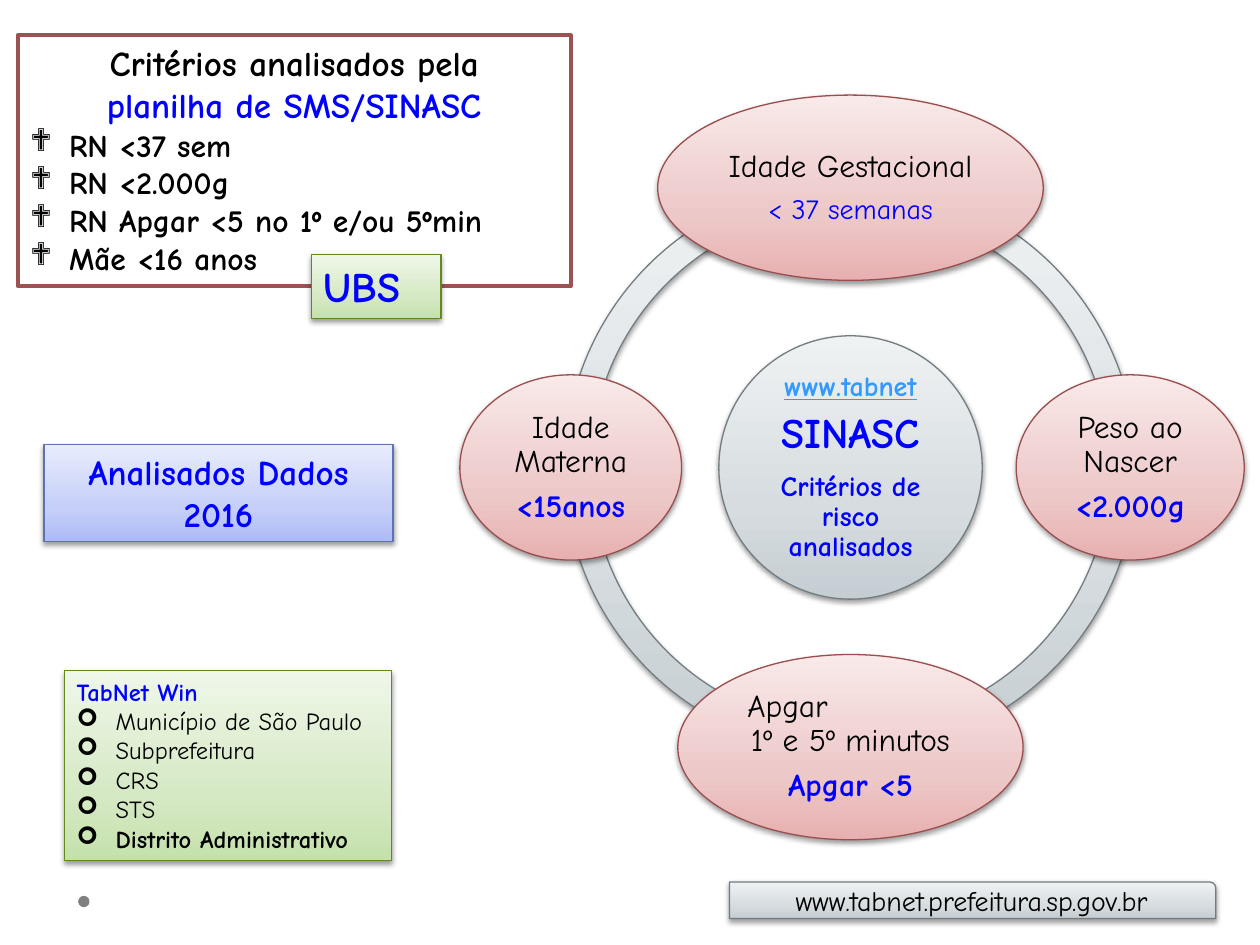
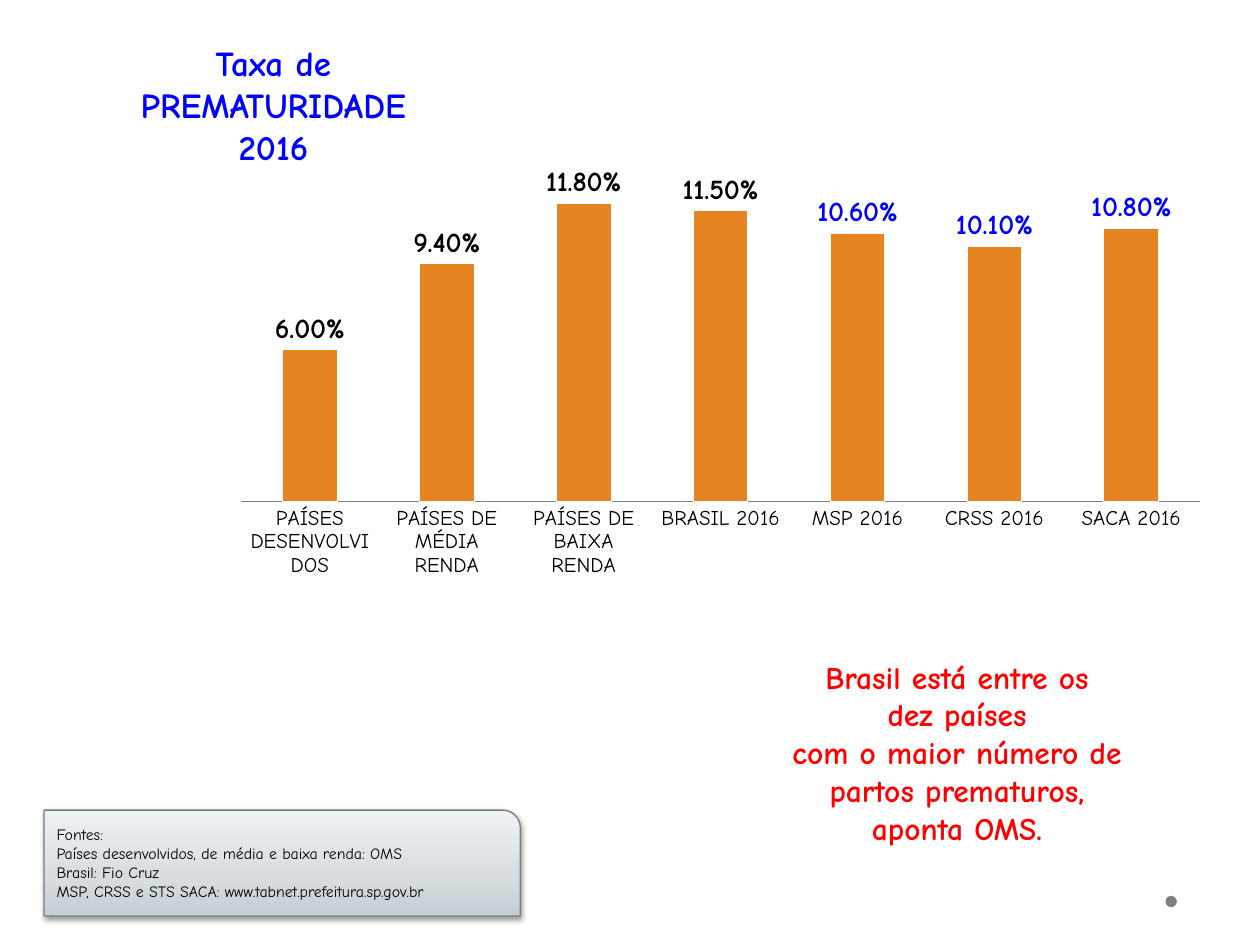
from lxml import etree
from pptx import Presentation
from pptx.chart.data import CategoryChartData
from pptx.dml.color import RGBColor
from pptx.enum.chart import XL_CHART_TYPE, XL_LABEL_POSITION, XL_TICK_MARK
from pptx.enum.shapes import MSO_SHAPE
from pptx.enum.text import MSO_ANCHOR, PP_ALIGN
from pptx.oxml.ns import qn
from pptx.util import Inches, Pt

RECTANGLE = MSO_SHAPE.RECTANGLE
ELLIPSE = MSO_SHAPE.OVAL
ARC = MSO_SHAPE.BLOCK_ARC
SOURCE_BAND = MSO_SHAPE.ROUND_1_RECTANGLE
LEFT, CENTER = PP_ALIGN.LEFT, PP_ALIGN.CENTER
TOP, MIDDLE = MSO_ANCHOR.TOP, MSO_ANCHOR.MIDDLE
COLUMNS = XL_CHART_TYPE.COLUMN_CLUSTERED
OUTSIDE_END = XL_LABEL_POSITION.OUTSIDE_END
NO_TICK = XL_TICK_MARK.NONE

FONT = "Comic Neue"
BLACK, WHITE, GRAY = "000000", "FFFFFF", "808080"
BLUE, LIGHT_BLUE, RED = "0000FF", "3399FF", "FF0000"
ORANGE, BROWN = "E68422", "9C5252"
PERCENT = "0.00%"

# Each theme: gradient stops from bottom to top, then the outline
SILVER = ("C5CED2", "D6DCDF", "EFF2F3", "727D82")
ROSE = ("E8B0B0", "EDC8C8", "F9E9E9", "9A4E4E")
PERIWINKLE = ("ADBBF6", "C5CFF8", "E8ECFD", "5C72B2")
GREEN = ("C5E1AB", "D6E9C5", "EFF7E9", "62891C")


def rgb(hex_color):
    return RGBColor.from_string(hex_color)


def add_element(parent, tag, **attributes):
    return etree.SubElement(parent, qn(tag), {key: str(value) for key, value in attributes.items()})


def add_plain_shape(slide, kind, box, fill, line=None, width=0.75):
    shape = slide.shapes.add_shape(kind, *map(Inches, box))
    shape.shadow.inherit = False
    shape.fill.solid()
    shape.fill.fore_color.rgb = rgb(fill)
    if line:
        shape.line.color.rgb = rgb(line)
        shape.line.width = Pt(width)
    else:
        shape.line.fill.background()
    return shape


def add_glossy_shape(slide, kind, box, theme):
    """Shape with a vertical three-stop gradient and a soft shadow."""
    *stops, line = theme
    shape = add_plain_shape(slide, kind, box, stops[0], line)
    shape.fill.gradient()
    properties = shape._element.spPr
    gradient = properties.find(qn("a:gradFill"))
    for child in list(gradient):
        gradient.remove(child)
    stop_list = add_element(gradient, "a:gsLst")
    for position, color in zip((0, 35000, 100000), stops):
        stop = add_element(stop_list, "a:gs", pos=position)
        add_element(stop, "a:srgbClr", val=color)
    add_element(gradient, "a:lin", ang=270 * 60000, scaled=0)

    effects = properties.find(qn("a:effectLst"))
    shadow = add_element(effects, "a:outerShdw", blurRad=Pt(3.1), dist=Pt(1.6),
                         dir=90 * 60000, rotWithShape=0)
    shadow_color = add_element(shadow, "a:srgbClr", val=BLACK)
    add_element(shadow_color, "a:alpha", val=38000)
    return shape


def line_of(text, size, color=BLACK, bold=False, **options):
    """One paragraph; options: align, bullet, indent, underline, after."""
    return {"text": text, "size": size, "color": color, "bold": bold, **options}


def write(shape, lines, anchor=TOP, align=LEFT, inset=None, spacing=None):
    frame = shape.text_frame
    frame.word_wrap = True
    frame.vertical_anchor = anchor
    if inset is not None:
        frame.margin_left = frame.margin_right = Inches(inset)
        frame.margin_top = frame.margin_bottom = Inches(inset)
    for index, line in enumerate(lines):
        paragraph = frame.add_paragraph() if index else frame.paragraphs[0]
        paragraph.text = line["text"]
        paragraph.alignment = line.get("align", align)
        if spacing:
            paragraph.line_spacing = spacing
        if "after" in line:
            paragraph.space_after = Pt(line["after"])
        properties = paragraph._p.get_or_add_pPr()
        if "indent" in line:
            properties.set("marL", str(Inches(line["indent"])))
        if "bullet" in line:
            properties.set("marL", str(Inches(0.31)))
            properties.set("indent", str(Inches(-0.31)))
            add_element(properties, "a:buFont", typeface="Wingdings")
            add_element(properties, "a:buChar", char=line["bullet"])
        for run in paragraph.runs:
            font = run.font
            font.name, font.size, font.bold = FONT, Pt(line["size"]), line["bold"]
            font.color.rgb = rgb(line["color"])
            if line.get("underline"):
                font.underline = True


def add_text(slide, box, lines, align):
    write(slide.shapes.add_textbox(*map(Inches, box)), lines, align=align)


def add_dot(slide, left):
    add_plain_shape(slide, ELLIPSE, (left, 7.11, 0.09, 0.09), GRAY)


def add_cycle_node(slide, center, size, theme, lines, inset=0.03):
    left, top = (middle - length / 2 for middle, length in zip(center, size))
    node = add_glossy_shape(slide, ELLIPSE, (left, top, *size), theme)
    spaced = [{"after": line["size"] * 0.35, **line} for line in lines]
    write(node, spaced, MIDDLE, CENTER, inset, spacing=0.9)


def add_criteria_cycle(slide):
    center_x, center_y, diameter, radius = 6.75, 3.71, 4.54, 2.22
    ring_box = (center_x - diameter / 2, center_y - diameter / 2, diameter, diameter)

    # Ring of four quarter arcs (54 adjustment units are 90 degrees)
    for quarter in (2, 1, 0, 3):
        arc = add_glossy_shape(slide, ARC, ring_box, SILVER)
        arc.adjustments[0] = quarter * 54
        arc.adjustments[1] = (quarter + 1) % 4 * 54
        arc.adjustments[2] = 0.046

    add_cycle_node(slide, (center_x, center_y), (2.09, 2.09), SILVER, [
        line_of("www.tabnet", 16, LIGHT_BLUE, True, underline=True),
        line_of("SINASC", 24, BLUE, True),
        line_of("Critérios de risco analisados", 16, BLUE, True),
    ], inset=0.02)

    # Criteria clockwise from the top: direction, width, text
    criteria = [
        (0, -1, 3.06, [line_of("Idade Gestacional", 18),
                       line_of("< 37 semanas", 16, BLUE)]),
        (1, 0, 1.81, [line_of("Peso ao Nascer", 18),
                      line_of("<2.000g", 18, BLUE, True)]),
        (0, 1, 2.74, [line_of("Apgar", 18, align=LEFT, indent=0.12, after=0),
                      line_of("1º e 5º minutos", 18),
                      line_of("Apgar <5", 18, BLUE, True)]),
        (-1, 0, 1.76, [line_of("Idade Materna", 18),
                       line_of("<15anos", 18, BLUE, True)]),
    ]
    for across, down, width, lines in criteria:
        center = (center_x + across * radius, center_y + down * radius)
        add_cycle_node(slide, center, (width, 1.47), ROSE, lines)


def add_rate_chart(slide, rates):
    data = CategoryChartData(number_format=PERCENT)
    data.categories = list(rates)
    data.add_series("Series 1", rates.values())
    frame = slide.shapes.add_chart(COLUMNS, *map(Inches, (0.59, -0.19, 9.21, 7.56)), data)
    chart = frame.chart
    chart.has_legend = chart.has_title = False
    chart.font.name, chart.font.size = FONT, Pt(12)
    chart.font.color.rgb = rgb(BLACK)

    # Axes
    category_axis, value_axis = chart.category_axis, chart.value_axis
    category_axis.major_tick_mark = category_axis.minor_tick_mark = NO_TICK
    category_axis.format.line.color.rgb = rgb(GRAY)
    value_axis.minimum_scale, value_axis.maximum_scale = 0, 0.14
    value_axis.has_major_gridlines = False
    value_axis.tick_labels.number_format = PERCENT
    value_axis.tick_labels.number_format_is_linked = False
    value_axis.visible = False

    # Columns and their labels
    plot = chart.plots[0]
    plot.gap_width = 150
    plot.vary_by_categories = False
    series = plot.series[0]
    series.format.fill.solid()
    series.format.fill.fore_color.rgb = rgb(ORANGE)
    series.format.line.color.rgb = rgb(WHITE)
    labels = series.data_labels
    labels.show_value = True
    labels.number_format = PERCENT
    labels.number_format_is_linked = False
    labels.position = OUTSIDE_END
    local_labels = [series.points[index].data_label for index in (4, 5, 6)]
    for label, color in [(labels, BLACK)] + [(label, BLUE) for label in local_labels]:
        label.font.name, label.font.size, label.font.bold = FONT, Pt(16), True
        label.font.color.rgb = rgb(color)
        label.position = OUTSIDE_END

    # Fixed inner plot area
    plot_area = chart._chartSpace.chart.plotArea
    for old_layout in plot_area.findall(qn("c:layout")):
        plot_area.remove(old_layout)
    layout = etree.Element(qn("c:layout"))
    plot_area.insert(0, layout)
    manual = add_element(layout, "c:manualLayout")
    settings = {"layoutTarget": "inner", "xMode": "edge", "yMode": "edge",
                "x": 0.144, "y": 0.18, "w": 0.826, "h": 0.372}
    for name, value in settings.items():
        add_element(manual, f"c:{name}", val=value)


def build_criteria_slide(slide):
    add_dot(slide, 0.62)
    add_criteria_cycle(slide)

    band = add_glossy_shape(slide, SOURCE_BAND, (5.79, 7, 3.86, 0.29), SILVER)
    write(band, [line_of("www.tabnet.prefeitura.sp.gov.br", 16)], MIDDLE, CENTER)

    # Spreadsheet criteria
    criteria = ["RN <37 sem", "RN <2.000g", "RN Apgar <5 no 1º e/ou 5ºmin", "Mãe <16 anos"]
    panel = add_plain_shape(slide, RECTANGLE, (0.14, 0.28, 4.39, 1.99), WHITE, BROWN, 2.25)
    write(panel, [
        line_of("Critérios analisados pela", 20, bold=True, align=CENTER),
        line_of("planilha de SMS/SINASC", 20, BLUE, True, align=CENTER),
        *[line_of(text, 18, bold=True, bullet="❖") for text in criteria],
    ])

    # Year and geographic levels
    year = add_glossy_shape(slide, RECTANGLE, (0.35, 3.53, 2.77, 0.77), PERIWINKLE)
    write(year, [line_of(text, 20, BLUE, True) for text in ("Analisados Dados", "2016")],
          align=CENTER)
    levels = ["Município de São Paulo", "Subprefeitura", "CRS", "STS"]
    panel = add_glossy_shape(slide, RECTANGLE, (0.51, 5.32, 2.6, 1.51), GREEN)
    write(panel, [
        line_of("TabNet Win", 14, BLUE, True),
        *[line_of(text, 14, bullet="➢") for text in levels],
        line_of("Distrito Administrativo", 14, bold=True, bullet="➢"),
    ])

    unit = add_glossy_shape(slide, RECTANGLE, (2.47, 2.02, 1.03, 0.51), GREEN)
    write(unit, [line_of("UBS", 24, BLUE, True)])


def build_rate_slide(slide):
    add_dot(slide, 9.25)
    message = ["Brasil está entre os", "dez países", "com o maior número de",
               "partos prematuros,", "aponta OMS."]
    add_text(slide, (6.02, 5.17, 3.15, 1.61),
             [line_of(text, 18, RED, True) for text in message], CENTER)

    sources = ["Fontes:", "Países desenvolvidos, de média e baixa renda: OMS",
               "Brasil: Fio Cruz", "MSP, CRSS e STS SACA: www.tabnet.prefeitura.sp.gov.br"]
    band = add_glossy_shape(slide, SOURCE_BAND, (0.35, 6.43, 3.78, 0.84), SILVER)
    write(band, [line_of(text, 9) for text in sources], MIDDLE)

    title = ["Taxa de", "PREMATURIDADE", "2016"]
    add_text(slide, (0.75, 0.28, 2.84, 1.45),
             [line_of(text, 20, BLUE, True) for text in title], CENTER)

    add_rate_chart(slide, {
        "PAÍSES DESENVOLVIDOS": 0.06, "PAÍSES DE MÉDIA RENDA": 0.094,
        "PAÍSES DE BAIXA RENDA": 0.118, "BRASIL 2016": 0.115,
        "MSP 2016": 0.106, "CRSS 2016": 0.101, "SACA 2016": 0.108,
    })


def main():
    presentation = Presentation()
    presentation.slide_width, presentation.slide_height = Inches(10), Inches(7.5)
    blank = presentation.slide_layouts[6]
    for build in (build_criteria_slide, build_rate_slide):
        build(presentation.slides.add_slide(blank))
    presentation.save("out.pptx")


if __name__ == "__main__":
    main()
